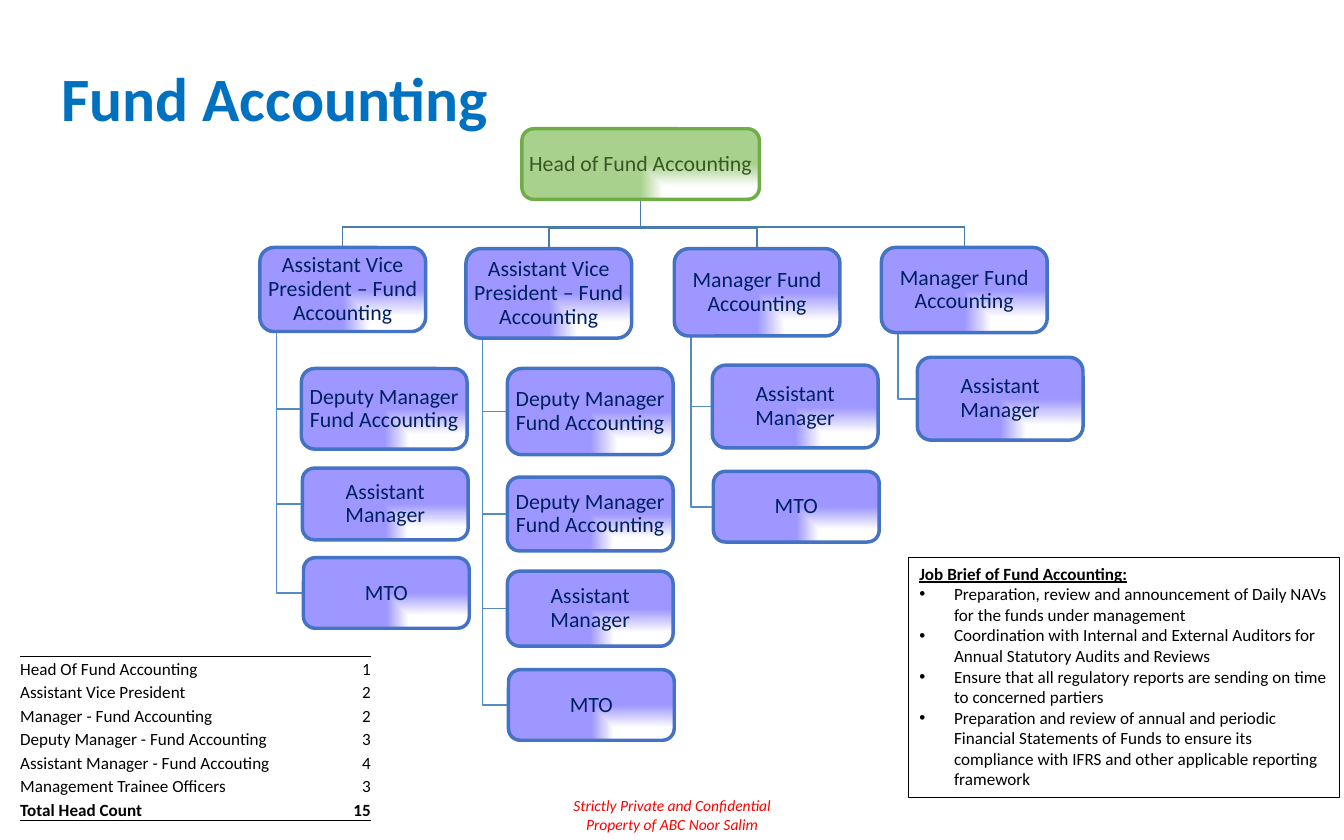
from lxml import etree
from pptx import Presentation
from pptx.dml.color import RGBColor
from pptx.enum.shapes import MSO_SHAPE
from pptx.enum.text import MSO_ANCHOR, PP_ALIGN
from pptx.oxml import parse_xml
from pptx.oxml.ns import qn
from pptx.util import Inches, Pt

LEFT, CENTER, RIGHT = PP_ALIGN.LEFT, PP_ALIGN.CENTER, PP_ALIGN.RIGHT
TOP, MIDDLE, BOTTOM = MSO_ANCHOR.TOP, MSO_ANCHOR.MIDDLE, MSO_ANCHOR.BOTTOM
RECT, ROUND = MSO_SHAPE.RECTANGLE, MSO_SHAPE.ROUNDED_RECTANGLE
NS = 'xmlns:a="http://schemas.openxmlformats.org/drawingml/2006/main"'
NO_TABLE_STYLE = "{2D5ABB26-0587-4C30-8999-92F81FD0307C}"
COLORS = {
    "title": "0070C0", "footer": "FF0000", "black": "000000", "white": "FFFFFF",
    "bus": "497CAB", "branch": "538DC1",
    "head_fill": "A9D18E", "head_line": "70AD47", "head_text": "385723",
    "staff_fill": "9E97FF", "staff_line": "4472C4", "staff_text": "002060",
}
BOX_W = 1.48
HEAD = ("Head of Fund Accounting", (4.66, 1.15, 2.12, 0.63))
AVP = "Assistant Vice President – Fund Accounting"
MANAGER = "Manager Fund Accounting"
DEPUTY = "Deputy Manager Fund Accounting"
ASSISTANT = "Assistant Manager"
# Each team: lead (text, left, top, height), then its members in the same form
TEAMS = [
    [(AVP, 2.32, 2.21, 0.75), (DEPUTY, 2.69, 3.29, 0.72),
     (ASSISTANT, 2.7, 4.18, 0.64), ("MTO", 2.71, 4.98, 0.63)],
    [(AVP, 4.16, 2.22, 0.8), (DEPUTY, 4.53, 3.29, 0.77), (DEPUTY, 4.53, 4.26, 0.66),
     (ASSISTANT, 4.53, 5.1, 0.67), ("MTO", 4.54, 5.98, 0.63)],
    [(MANAGER, 6.02, 2.22, 0.78), (ASSISTANT, 6.36, 3.26, 0.74),
     ("MTO", 6.37, 4.21, 0.63)],
    [(MANAGER, 7.87, 2.21, 0.76), (ASSISTANT, 8.19, 3.19, 0.74)],
]
HEAD_COUNT = [
    ("Head Of Fund Accounting", 1),
    ("Assistant Vice President", 2),
    ("Manager - Fund Accounting", 2),
    ("Deputy Manager - Fund Accounting", 3),
    ("Assistant Manager - Fund Accouting", 4),
    ("Management Trainee Officers", 3),
    ("Total Head Count", 15),
]
JOB_BRIEF = [
    "Preparation, review and announcement of Daily NAVs for the funds under management",
    "Coordination with Internal and External Auditors for Annual Statutory Audits and Reviews",
    "Ensure that all regulatory reports are sending on time to concerned partiers",
    "Preparation and review of annual and periodic Financial Statements of Funds to ensure "
    "its compliance with IFRS and other applicable reporting framework",
]


def rgb(name):
    return RGBColor.from_string(COLORS[name])


def inches(values):
    return [Inches(v) for v in values]


def write(p, text, size=11, color="black", bold=False, italic=False, underline=False,
          align=LEFT, spacing=None, bullet=False):
    if bullet:
        pPr = p._p.get_or_add_pPr()
        pPr.set("marL", str(Inches(0.31)))
        pPr.set("indent", str(-Inches(0.31)))
        pPr.append(parse_xml(f'<a:buFont {NS} typeface="Arial"/>'))
        pPr.append(parse_xml(f'<a:buChar {NS} char="•"/>'))
    p.alignment = align
    if spacing:
        p.line_spacing = spacing
    r = p.add_run()
    r.text = text
    f = r.font
    f.name, f.size, f.color.rgb = "Calibri", Pt(size), rgb(color)
    f.bold, f.italic, f.underline = bold, italic, underline


def add_title(s, box, text):
    tf = s.shapes.add_textbox(*inches(box)).text_frame
    tf.word_wrap, tf.vertical_anchor = True, MIDDLE
    write(tf.paragraphs[0], text, size=39.6, color="title", bold=True, spacing=0.9)


def add_footer(s, box, lines):
    tf = s.shapes.add_textbox(*inches(box)).text_frame
    tf.word_wrap = False
    for i, line in enumerate(lines):
        p = tf.add_paragraph() if i else tf.paragraphs[0]
        write(p, line, size=10, color="footer", italic=True, align=CENTER)


def add_elbow(s, points, color):
    """Draw an open line through the points."""
    start, *rest = [inches(pt) for pt in points]
    builder = s.shapes.build_freeform(*start)
    builder.add_line_segments(rest, close=False)
    sp = builder.convert_to_shape()
    sp.shadow.inherit = False
    sp.fill.background()
    sp.line.color.rgb, sp.line.width = rgb(color), Pt(1)


def add_role(s, box, text, kind):
    sp = s.shapes.add_shape(ROUND, *inches(box))
    sp.shadow.inherit = False
    sp.line.color.rgb, sp.line.width = rgb(kind + "_line"), Pt(2.25)
    sp.fill.background()
    stops = "".join(
        f'<a:gs pos="{pos}000"><a:srgbClr val="{COLORS[name]}"/></a:gs>'
        for pos, name in [(0, "white"), (36, "white"), (100, kind + "_fill")])
    spPr = sp._element.spPr
    spPr.replace(spPr.find(qn("a:noFill")), parse_xml(
        f'<a:gradFill {NS} rotWithShape="1"><a:gsLst>{stops}</a:gsLst>'
        '<a:path path="rect"><a:fillToRect l="100000" t="100000"/></a:path></a:gradFill>'))
    tf = sp.text_frame
    tf.word_wrap, tf.vertical_anchor = True, MIDDLE
    tf.margin_left = tf.margin_right = tf.margin_top = tf.margin_bottom = Inches(0.01)
    write(tf.paragraphs[0], text, size=14, color=kind + "_text", align=CENTER, spacing=0.9)


def add_org_chart(s, head, teams):
    text, (x, y, w, h) = head
    stem_x, stem_y = x + w / 2, y + h
    for (_, left, top, height), *members in teams:
        mid, bus_y = left + BOX_W / 2, top - 0.18
        add_elbow(s, [(stem_x, stem_y), (stem_x, bus_y), (mid, bus_y), (mid, top)], "bus")
        trunk = left + BOX_W / 10
        for _, member_x, member_y, member_h in members:
            mid_y = member_y + member_h / 2
            add_elbow(s, [(trunk, top + height), (trunk, mid_y), (member_x, mid_y)], "branch")
    add_role(s, head[1], text, "head")
    for team in teams:
        for role, left, top, height in team:
            add_role(s, (left, top, BOX_W, height), role, "staff")


def add_job_brief(s, box, heading, items):
    sp = s.shapes.add_shape(RECT, *inches(box))
    sp.shadow.inherit = False
    sp.fill.solid()
    sp.fill.fore_color.rgb = rgb("white")
    sp.line.color.rgb, sp.line.width = rgb("black"), Pt(1)
    tf = sp.text_frame
    tf.word_wrap, tf.vertical_anchor = True, TOP
    write(tf.paragraphs[0], heading, bold=True, underline=True)
    for item in items:
        write(tf.add_paragraph(), item, bullet=True)


def add_border(cell, side):
    tcPr = cell._tc.get_or_add_tcPr()
    ln = etree.Element(qn("a:" + side), w=str(Pt(1)))
    fill = etree.SubElement(ln, qn("a:solidFill"))
    etree.SubElement(fill, qn("a:srgbClr"), val=COLORS["black"])
    tcPr.insert(0, ln)


def add_head_count(s, box, rows):
    table = s.shapes.add_table(len(rows), 2, *inches(box)).table
    table.first_row = table.horz_banding = False
    table._tbl.tblPr.find(qn("a:tableStyleId")).text = NO_TABLE_STYLE
    table.columns[0].width, table.columns[1].width = inches((2.35, 0.78))
    last = len(rows) - 1
    for i, row in enumerate(rows):
        for j, value in enumerate(row):
            cell = table.cell(i, j)
            cell.fill.background()
            cell.vertical_anchor = BOTTOM
            cell.margin_left = cell.margin_right = cell.margin_top = cell.margin_bottom = 0
            write(cell.text_frame.paragraphs[0], str(value), bold=i == last,
                  align=RIGHT if j else LEFT)
            if i in (0, last):
                add_border(cell, "lnB" if i else "lnT")


def main():
    prs = Presentation()
    prs.slide_width, prs.slide_height = inches((12, 7.5))
    s = prs.slides.add_slide(prs.slide_layouts[6])
    add_footer(s, (5.01, 7.06, 1.98, 0.44),
               ["Strictly Private and Confidential", "Property of ABC Noor Salim"])
    add_title(s, (0.45, 0.52, 10.35, 0.78), "Fund Accounting")
    add_org_chart(s, HEAD, TEAMS)
    add_job_brief(s, (8.11, 4.98, 3.85, 2.14), "Job Brief of Fund Accounting:", JOB_BRIEF)
    add_head_count(s, (0.18, 5.86, 3.13, 1.47), HEAD_COUNT)
    prs.save("out.pptx")


if __name__ == "__main__":
    main()
